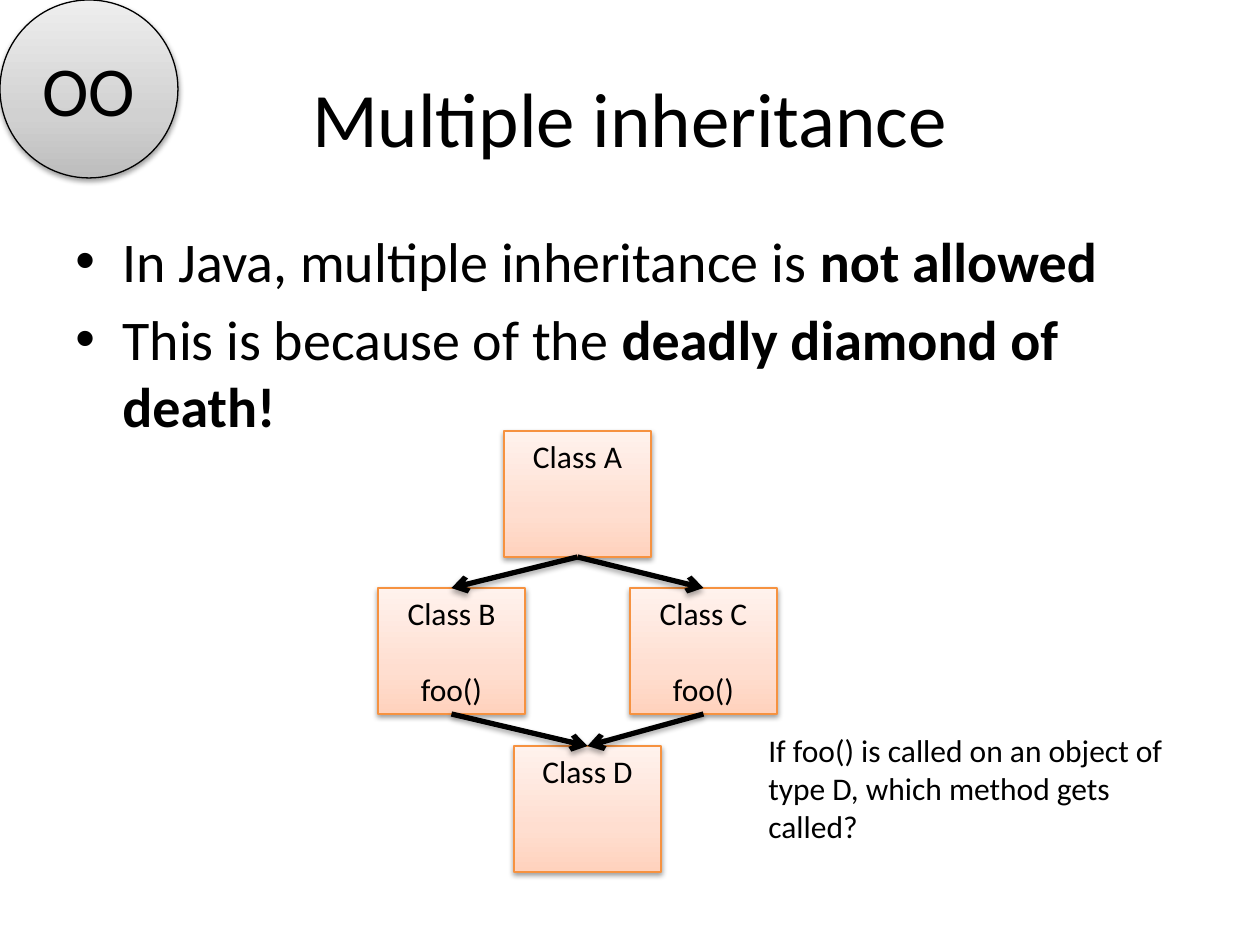
import copy

import pptx
import pptx.util
import pptx.dml.color
import pptx.enum.shapes
import pptx.enum.text
import pptx.oxml
import pptx.oxml.ns

RGB = pptx.dml.color.RGBColor
Pt = pptx.util.Pt
SHAPE = pptx.enum.shapes.MSO_SHAPE
ALIGN = pptx.enum.text.PP_ALIGN
ANCHOR = pptx.enum.text.MSO_ANCHOR
qn = pptx.oxml.ns.qn

FONT = "Calibri"
BLACK = RGB(0, 0, 0)
ORANGE = RGB(0xF6, 0x92, 0x40)
PEACH = [RGB(0xFF, 0xD2, 0xBD), RGB(0xFF, 0xDE, 0xD0), RGB(0xFF, 0xF2, 0xED)]
GREY = [RGB(0xBD, 0xBD, 0xBD), RGB(0xD1, 0xD1, 0xD1), RGB(0xEE, 0xEE, 0xEE)]
STOPS = [0, 0.35, 1]
BOX_W, BOX_H = 147, 126


def px(num):
    return pptx.util.Emu(round(num * 914400 / 126))


def place(item, *rect):
    item.left, item.top, item.width, item.height = map(px, rect)


def style(run, size, bold=False):
    run.font.name = FONT
    run.font.size = Pt(size)
    run.font.bold = bold
    run.font.color.rgb = BLACK


def write(frame, text, size, align, anchor):
    frame.word_wrap = True
    frame.vertical_anchor = anchor
    frame.text = text
    for para in frame.paragraphs:
        para.alignment = align
        for run in para.runs:
            style(run, size)


def xml(tag, **attrs):
    node = pptx.oxml.parse_xml(f"<{tag} {pptx.oxml.ns.nsdecls('a')}/>")
    for key, val in attrs.items():
        node.set(key, str(val))
    return node


def shade(props, dist, alpha):
    """Give the shape properties a soft black shadow straight below."""
    effects = props.find(qn("a:effectLst"))
    if effects is None:
        effects = xml("a:effectLst")
        props.append(effects)
    shadow = xml("a:outerShdw", blurRad=40000, dist=dist, dir=5400000, rotWithShape=0)
    color = xml("a:srgbClr", val="000000")
    color.append(xml("a:alpha", val=alpha * 1000))
    shadow.append(color)
    effects.append(shadow)


def blend(shape, colors):
    """Fill with three stops, from the bottom upwards."""
    shape.fill.gradient()
    shape.fill.gradient_angle = 90
    stops = shape._element.spPr.find(qn("a:gradFill")).find(qn("a:gsLst"))
    stops.append(copy.deepcopy(stops[-1]))
    for stop, color, spot in zip(shape.fill.gradient_stops, colors, STOPS):
        stop.color.rgb = color
        stop.position = spot


def add_form(slide, kind, rect, colors, edge, text, size, anchor):
    shape = slide.shapes.add_shape(kind, *map(px, rect))
    blend(shape, colors)
    shape.line.color.rgb = edge
    shape.line.width = Pt(0.75)
    shape.shadow.inherit = False
    shade(shape._element.spPr, 20000, 38)
    write(shape.text_frame, text, size, ALIGN.CENTER, anchor)
    return shape


def add_class(slide, left, top, name, method=None):
    text = f"{name}\n{method}" if method else name
    box = add_form(slide, SHAPE.RECTANGLE, (left, top, BOX_W, BOX_H),
                   PEACH, ORANGE, text, 18, ANCHOR.TOP)
    if method:
        box.text_frame.paragraphs[1].space_before = Pt(22)
    return box


def add_arrow(slide, start, end):
    """Join the bottom of one box to the top of another."""
    line = slide.shapes.add_connector(
        pptx.enum.shapes.MSO_CONNECTOR.STRAIGHT, 0, 0, 0, 0)
    line.begin_connect(start, 2)
    line.end_connect(end, 0)
    line.line.color.rgb = BLACK
    line.line.width = Pt(3)
    line.line._get_or_add_ln().append(xml("a:tailEnd", type="arrow"))
    shade(line._element.spPr, 23000, 35)


def add_text(slide, rect, text, size):
    box = slide.shapes.add_textbox(*map(px, rect))
    write(box.text_frame, text, size, ALIGN.LEFT, ANCHOR.TOP)
    return box


def add_points(slide, rect, points):
    """List points that each end in a bold phrase."""
    box = add_text(slide, rect, "\n".join(plain for plain, _ in points), 32)
    for para, (_, strong) in zip(box.text_frame.paragraphs, points):
        run = para.add_run()
        run.text = strong
        style(run, 32, True)
        para.space_before = Pt(6.4)
        props = para._p.get_or_add_pPr()
        props.set("marL", str(px(47)))
        props.set("indent", str(-px(47)))
        props.append(xml("a:buFont", typeface="Arial"))
        props.append(xml("a:buChar", char="•"))


def main():
    deck = pptx.Presentation()
    deck.slide_width, deck.slide_height = px(1260), px(945)
    slide = deck.slides.add_slide(deck.slide_layouts[5])

    # Title and points
    title = slide.shapes.title
    place(title, 63, 38, 1134, 157)
    write(title.text_frame, "Multiple inheritance", 44, ALIGN.CENTER, ANCHOR.MIDDLE)
    add_points(slide, (63, 220, 1134, 231), [
        ("In Java, multiple inheritance is ", "not allowed"),
        ("This is because of the ", "deadly diamond of death!"),
    ])

    # Diamond of classes
    top = add_class(slide, 504, 431, "Class A")
    sides = [add_class(slide, 378, 588, "Class B", "foo()"),
             add_class(slide, 630, 588, "Class C", "foo()")]
    base = add_class(slide, 514, 746, "Class D")
    for side in sides:
        add_arrow(slide, top, side)
    for side in sides:
        add_arrow(slide, side, base)

    # Question and corner badge
    add_text(slide, (756, 725, 441, 127),
             "If foo() is called on an object of type D, which method gets called?", 18)
    add_form(slide, SHAPE.OVAL, (0, 0, 178, 178), GREY, BLACK, "OO", 40, ANCHOR.MIDDLE)

    deck.save("out.pptx")


if __name__ == "__main__":
    main()
